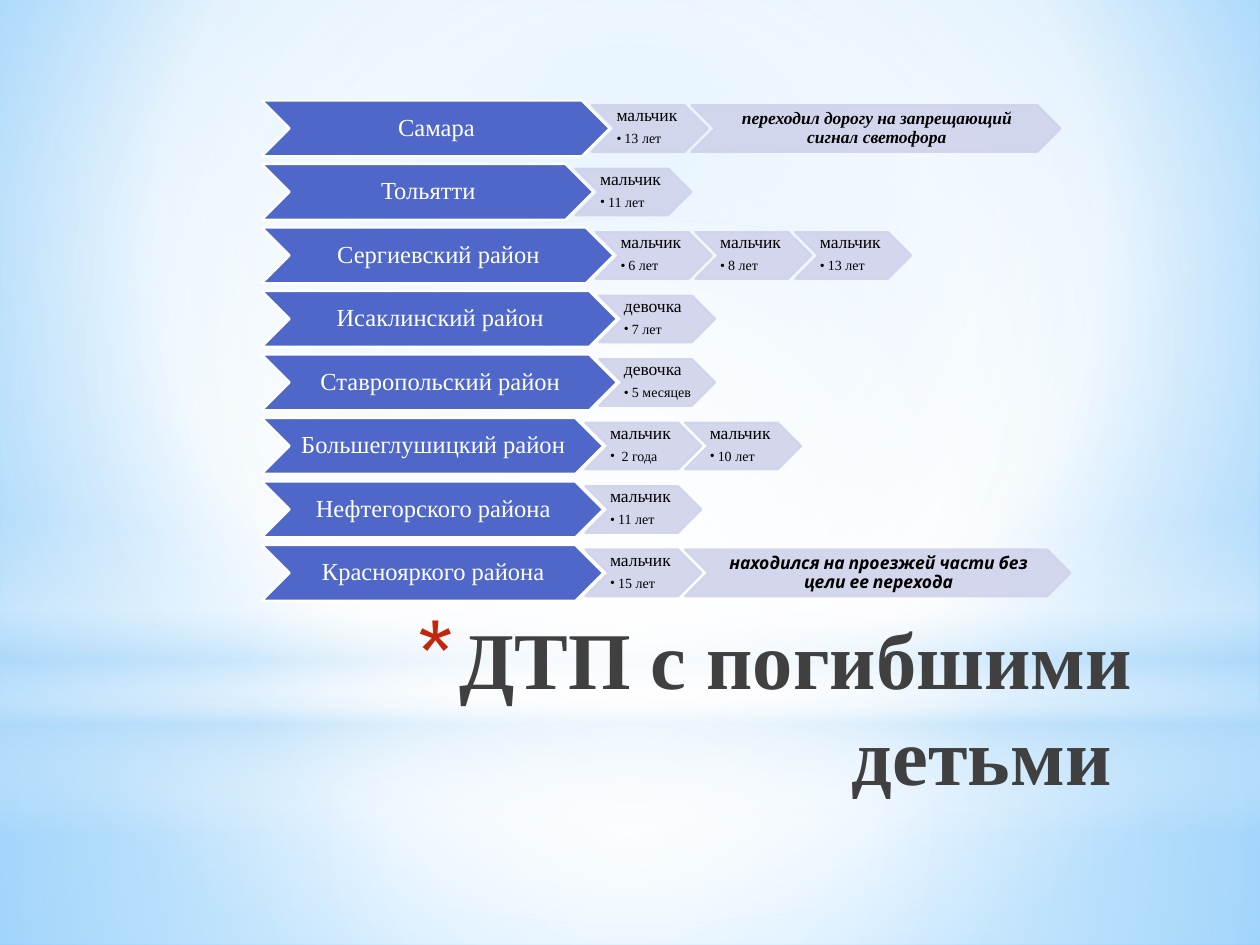
from pptx import Presentation
from pptx.dml.color import RGBColor as Rgb
from pptx.enum.shapes import MSO_SHAPE as Kind
from pptx.enum.text import MSO_ANCHOR as Anchor, PP_ALIGN as Align
from pptx.oxml import parse_xml as to_xml
from pptx.oxml.ns import nsdecls, qn
from pptx.util import Cm, Pt
from lxml.etree import SubElement as Sub

ROWS = [
    ("Самара", 7.01, [("мальчик", "13 лет")],
     ("переходил дорогу на запрещающий сигнал светофора", 7.44, "Times New Roman")),
    ("Тольятти", 6.68, [("мальчик", "11 лет")], None),
    ("Сергиевский район", 7.09,
     [("мальчик", "6 лет"), ("мальчик", "8 лет"), ("мальчик", "13 лет")], None),
    ("Исаклинский район", 7.16, [("девочка", "7 лет")], None),
    ("Ставропольский район", 7.16, [("девочка", "5 месяцев")], None),
    ("Большеглушицкий район", 6.88, [("мальчик", " 2 года"), ("мальчик", "10 лет")], None),
    ("Нефтегорского района", 6.88, [("мальчик", "11 лет")], None),
    ("Краснояркого района", 6.88, [("мальчик", "15 лет")],
     ("находился на проезжей части без цели ее перехода", 7.77, "Karla")),
]
LEFT, TOP, STEP = 5.28, 2.03, 1.28
TALL, LOW, CHILD = 1.12, 0.94, 2.34


def paint(fill, code, alpha=100):
    fill.solid()
    fill.fore_color.rgb = Rgb.from_string(code)
    if alpha < 100:
        node = fill._xPr.find(qn("a:solidFill"))[0]
        Sub(node, qn("a:alpha")).set("val", str(alpha * 1000))


def blend(owner, stops, focus=(50, 50, 50, 50), angle=None):
    owner.fill.background()
    return to_xml(
        f'<a:gradFill {nsdecls("a")} rotWithShape="1"><a:gsLst>'
        + "".join(f'<a:gs pos="{at * 1000}"><a:srgbClr val="{code}">'
                  f'<a:alpha val="{alpha * 1000}"/></a:srgbClr></a:gs>'
                  for at, code, alpha in stops)
        + "</a:gsLst>"
        + (f'<a:lin ang="{angle * 60000}" scaled="0"/>' if angle is not None else
           '<a:path path="circle"><a:fillToRect l="{}" t="{}" r="{}" b="{}"/></a:path>'.format(
               *(side * 1000 for side in focus)))
        + "</a:gradFill>")


def write(frame, text, size=10, font="Times New Roman", color="000000", bold=False,
          slant=False, align=Align.LEFT, line=0.9, after=0, mark=None, hang=0,
          tint=None, scale=100):
    para = frame.paragraphs[0]
    if para.runs:
        para = frame.add_paragraph()
    para.alignment, para.line_spacing, para.space_after = align, line, Pt(after)
    run = para.add_run()
    run.text = text
    run.font.size, run.font.name = Pt(size), font
    run.font.bold, run.font.italic = bold, slant
    paint(run.font.fill, color)
    if mark:
        props = para._p.get_or_add_pPr()
        props.set("marL", str(Cm(hang)))
        props.set("indent", str(-Cm(hang)))
        Sub(Sub(props, qn("a:buClr")), qn("a:srgbClr")).set("val", tint or color)
        Sub(props, qn("a:buSzPct")).set("val", str(scale * 1000))
        Sub(props, qn("a:buFont")).set("typeface", "Karla" if tint else font)
        Sub(props, qn("a:buChar")).set("char", mark)


class Deck:
    """Holds the palette and the current slide, and draws its elements."""

    blue, pale, white = "4E67C8", "D0D3EB", "FFFFFF"

    def __init__(self):
        self.show = Presentation()
        self.show.slide_width, self.show.slide_height = Cm(25.4), Cm(19.05)
        self.slide = self.show.slides.add_slide(self.show.slide_layouts[6])

    def swap(self, owner, root, *args, **kwargs):
        fill = blend(owner, *args, **kwargs)
        old = root.find(".//" + qn("a:noFill"))
        old.getparent().replace(old, fill)

    def ground(self, stops, focus):
        self.swap(self.slide.background, self.slide.element, stops, focus)

    def shape(self, kind, *box):
        shape = self.slide.shapes.add_shape(kind, *map(Cm, box))
        shape.shadow.inherit = False
        return shape

    def glow(self, kind, top, high, stops, angle=None):
        shape = self.shape(kind, 0, top, 25.4, high)
        self.swap(shape, shape.element, stops, angle=angle)
        shape.line.fill.background()

    def frame(self, shape, anchor, pad):
        frame = shape.text_frame
        frame.word_wrap, frame.vertical_anchor = True, anchor
        (frame.margin_left, frame.margin_top,
         frame.margin_right, frame.margin_bottom) = map(Cm, pad)
        return frame

    def arrow(self, box, fill, edge, alpha=100, anchor=Anchor.MIDDLE):
        shape = self.shape(Kind.CHEVRON, *box)
        paint(shape.fill, fill, alpha)
        paint(shape.line.fill, edge, alpha)
        shape.line.width = Pt(1.25)
        return self.frame(shape, anchor, (0.03, 0.03, 0, 0.03))

    def place(self, left, top, name, wide):
        frame = self.arrow((left, top, wide, TALL), self.blue, self.white)
        write(frame, name, size=14, color=self.white, align=Align.CENTER)

    def child(self, left, top, who, age):
        frame = self.arrow((left, top, CHILD, LOW), self.pale, self.pale, 90, Anchor.TOP)
        write(frame, who, after=3.5)
        write(frame, age, size=8, mark="•", hang=0.16)

    def cause(self, left, top, text, wide, font):
        frame = self.arrow((left, top, wide, LOW), self.pale, self.pale, 90)
        write(frame, text, font=font, bold=True, slant=True, align=Align.CENTER)

    def title(self, text, *box):
        shape = self.slide.shapes.add_textbox(*map(Cm, box))
        frame = self.frame(shape, Anchor.TOP, (0.25, 0.13, 0.25, 0.13))
        write(frame, text, size=46, color="404040", bold=True, align=Align.RIGHT,
              line=1, mark="*", hang=0.89, tint="C3260C", scale=128)


def main():
    deck = Deck()
    white, sky = "FFFFFF", "B4DCFA"
    deck.ground([(0, "9ED5FF", 100), (60, white, 100), (100, "5BB9FF", 100)], (20, 10, 20, 60))
    deck.glow(Kind.RECTANGLE, 14.17, 4.88, [(0, white, 91), (37, white, 76), (100, sky, 79)])
    deck.glow(Kind.RECTANGLE, 0, 14.17, [(0, white, 89), (48, white, 62), (100, sky, 79)])
    deck.glow(Kind.RECTANGLE, 10.46, 6.35,
              [(0, white, 0), (29, white, 30), (45, sky, 40),
               (55, white, 26), (65, sky, 60), (100, white, 0)], angle=90)
    deck.glow(Kind.OVAL, 4.45, 14.17, [(0, white, 100), (56, white, 0)])
    deck.title("ДТП с погибшими детьми ", 4.98, 12.14, 18.08, 3.18)
    for row, (name, wide, kids, cause) in enumerate(ROWS):
        top = TOP + row * STEP
        deck.place(LEFT, top, name, wide)
        left, top = LEFT + wide - 0.36, top + (TALL - LOW) / 2
        for who, age in kids:
            deck.child(left, top, who, age)
            left += CHILD - 0.33
        if cause:
            deck.cause(left, top, *cause)
    deck.show.save("out.pptx")


if __name__ == "__main__":
    main()
